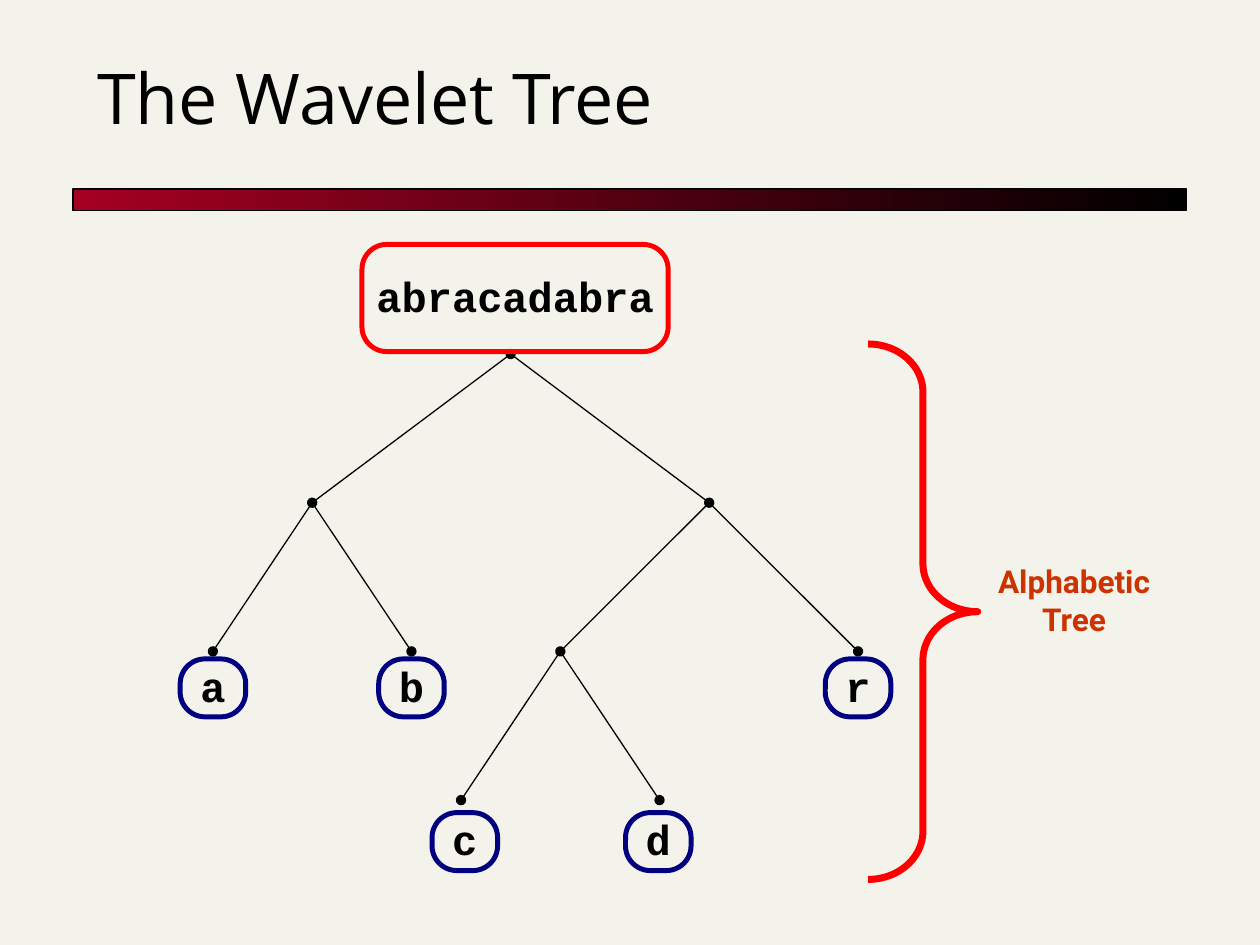
from collections import namedtuple
from dataclasses import dataclass

from lxml import etree
from pptx import Presentation
from pptx.dml.color import RGBColor
from pptx.enum.shapes import MSO_CONNECTOR, MSO_SHAPE
from pptx.enum.text import MSO_ANCHOR, MSO_AUTO_SIZE, PP_ALIGN
from pptx.oxml.ns import qn
from pptx.util import Inches, Pt

STRAIGHT = MSO_CONNECTOR.STRAIGHT
RECTANGLE, ROUNDED = MSO_SHAPE.RECTANGLE, MSO_SHAPE.ROUNDED_RECTANGLE
BRACE = MSO_SHAPE.RIGHT_BRACE
LEFT, CENTER = PP_ALIGN.LEFT, PP_ALIGN.CENTER
MIDDLE, BOTTOM = MSO_ANCHOR.MIDDLE, MSO_ANCHOR.BOTTOM
NO_AUTOFIT = MSO_AUTO_SIZE.NONE
TITLE_ONLY = 5

Box = namedtuple("Box", "left top width height")


@dataclass(frozen=True)
class Theme:
    background: RGBColor = RGBColor(0xF4, 0xF3, 0xEB)
    ink: RGBColor = RGBColor(0, 0, 0)
    bar_start: RGBColor = RGBColor(0xA5, 0x00, 0x21)
    accent: RGBColor = RGBColor(0xFF, 0, 0)
    leaf: RGBColor = RGBColor(0, 0, 0x80)
    label: RGBColor = RGBColor(0xCC, 0x33, 0)
    title_font: str = "Open Sans"
    code_font: str = "Courier New"
    label_font: str = "Roboto"
    title_size: Pt = Pt(40)
    code_size: Pt = Pt(24)
    label_size: Pt = Pt(18)
    thin: Pt = Pt(0.75)
    frame: Pt = Pt(2.83)
    brace: Pt = Pt(4)


THEME = Theme()

# Tree nodes as (column, level); the columns divide the tree width evenly
COLUMNS, LEVELS = 13, 3
NODES = {
    "root": (6, 0), "left": (2, 1), "right": (10, 1), "inner": (7, 2),
    "a": (0, 2), "b": (4, 2), "r": (13, 2), "c": (5, 3), "d": (9, 3),
}
EDGES = [
    ("root", "right"), ("root", "left"), ("right", "r"), ("right", "inner"),
    ("inner", "d"), ("inner", "c"), ("left", "b"), ("left", "a"),
]
# Offset of each leaf frame's top centre from its node, in inches
LEAF_OFFSETS = {
    "a": (0, 0.06), "b": (0, 0.06), "c": (0.03, 0.1),
    "d": (-0.01, 0.1), "r": (0, 0.06),
}


def inch_box(left, top, width, height):
    return Box(Inches(left), Inches(top), Inches(width), Inches(height))


def style_paragraph(paragraph, font, size, color, bold, alignment):
    paragraph.alignment = alignment
    paragraph.font.name = font
    paragraph.font.size = size
    paragraph.font.bold = bold
    paragraph.font.color.rgb = color


def add_outline(slide, preset, box, color, width):
    shape = slide.shapes.add_shape(preset, *box)
    shape.shadow.inherit = False
    shape.fill.background()
    shape.line.color.rgb = color
    shape.line.width = width
    return shape


def add_code_frame(slide, box, text, color, rounding):
    shape = add_outline(slide, ROUNDED, box, color, THEME.frame)
    shape.adjustments[0] = rounding
    frame = shape.text_frame
    frame.word_wrap = False
    frame.vertical_anchor = MIDDLE
    frame.margin_left = frame.margin_right = Inches(0.02)
    frame.margin_top = frame.margin_bottom = Inches(0.02)
    frame.text = text
    paragraph = frame.paragraphs[0]
    paragraph.line_spacing = 0.95
    style_paragraph(paragraph, THEME.code_font, THEME.code_size, THEME.ink, True, CENTER)


def add_edge(slide, start, end, dot_at_start):
    edge = slide.shapes.add_connector(STRAIGHT, *start, *end)
    edge.line.color.rgb = THEME.ink
    edge.line.width = THEME.thin
    line = edge.line._get_or_add_ln()
    if dot_at_start:
        etree.SubElement(line, qn("a:headEnd"), type="oval")
    etree.SubElement(line, qn("a:tailEnd"), type="oval")
    etree.SubElement(edge._element.spPr, qn("a:effectLst"))


def add_title(slide, box):
    title = slide.shapes.title
    title.left, title.top, title.width, title.height = box
    frame = title.text_frame
    frame.text = "The Wavelet Tree"
    frame.vertical_anchor = BOTTOM
    frame.auto_size = NO_AUTOFIT
    style_paragraph(frame.paragraphs[0], THEME.title_font, THEME.title_size,
                    THEME.ink, False, LEFT)


def add_title_bar(slide, box):
    bar = add_outline(slide, RECTANGLE, box, THEME.ink, THEME.thin)
    bar.fill.gradient()
    bar.fill.gradient_angle = 0
    colors = (THEME.bar_start, THEME.ink)
    for stop, position, color in zip(bar.fill.gradient_stops, (0, 1), colors):
        stop.position = position
        stop.color.rgb = color


def add_tree(slide, box):
    points = {
        name: (box.left + box.width * column // COLUMNS,
               box.top + box.height * level // LEVELS)
        for name, (column, level) in NODES.items()
    }
    # Edges with a dot at every node
    for parent, child in EDGES:
        add_edge(slide, points[parent], points[child], (parent, child) == EDGES[1])

    # Leaf letters
    width, height = Inches(0.52), Inches(0.46)
    for letter, (shift, drop) in LEAF_OFFSETS.items():
        x, y = points[letter]
        leaf_box = Box(x + Inches(shift) - width // 2, y + Inches(drop), width, height)
        add_code_frame(slide, leaf_box, letter, THEME.leaf, 0.428)

    # Whole text above the root
    root_x, root_y = points["root"]
    root_box = Box(root_x - Inches(1.18), root_y - Inches(0.87), Inches(2.43), Inches(0.85))
    add_code_frame(slide, root_box, "abracadabra", THEME.accent, 0.231)


def add_brace_label(slide, box):
    # Brace on the left, label beside its point
    brace_width, label_height = Inches(0.87), Inches(0.7)
    brace_box = Box(box.left, box.top, brace_width, box.height)
    brace = add_outline(slide, BRACE, brace_box, THEME.accent, THEME.brace)
    brace.adjustments[0] = 0.439
    brace.adjustments[1] = 0.5

    label = slide.shapes.add_textbox(
        box.left + brace_width, box.top + Inches(1.68),
        box.width - brace_width, label_height)
    frame = label.text_frame
    frame.word_wrap = False
    frame.text = "Alphabetic\nTree"
    for paragraph in frame.paragraphs:
        style_paragraph(paragraph, THEME.label_font, THEME.label_size,
                        THEME.label, True, CENTER)


def main():
    presentation = Presentation()
    presentation.slide_width = Inches(10)
    presentation.slide_height = Inches(7.5)
    slide = presentation.slides.add_slide(presentation.slide_layouts[TITLE_ONLY])
    background = slide.background.fill
    background.solid()
    background.fore_color.rgb = THEME.background

    add_title_bar(slide, inch_box(0.58, 1.5, 8.84, 0.17))
    add_title(slide, inch_box(0.67, 0.36, 8.5, 0.79))
    add_tree(slide, inch_box(1.69, 2.81, 5.12, 3.54))
    add_brace_label(slide, inch_box(6.89, 2.73, 2.4, 4.25))
    presentation.save("out.pptx")


if __name__ == "__main__":
    main()
